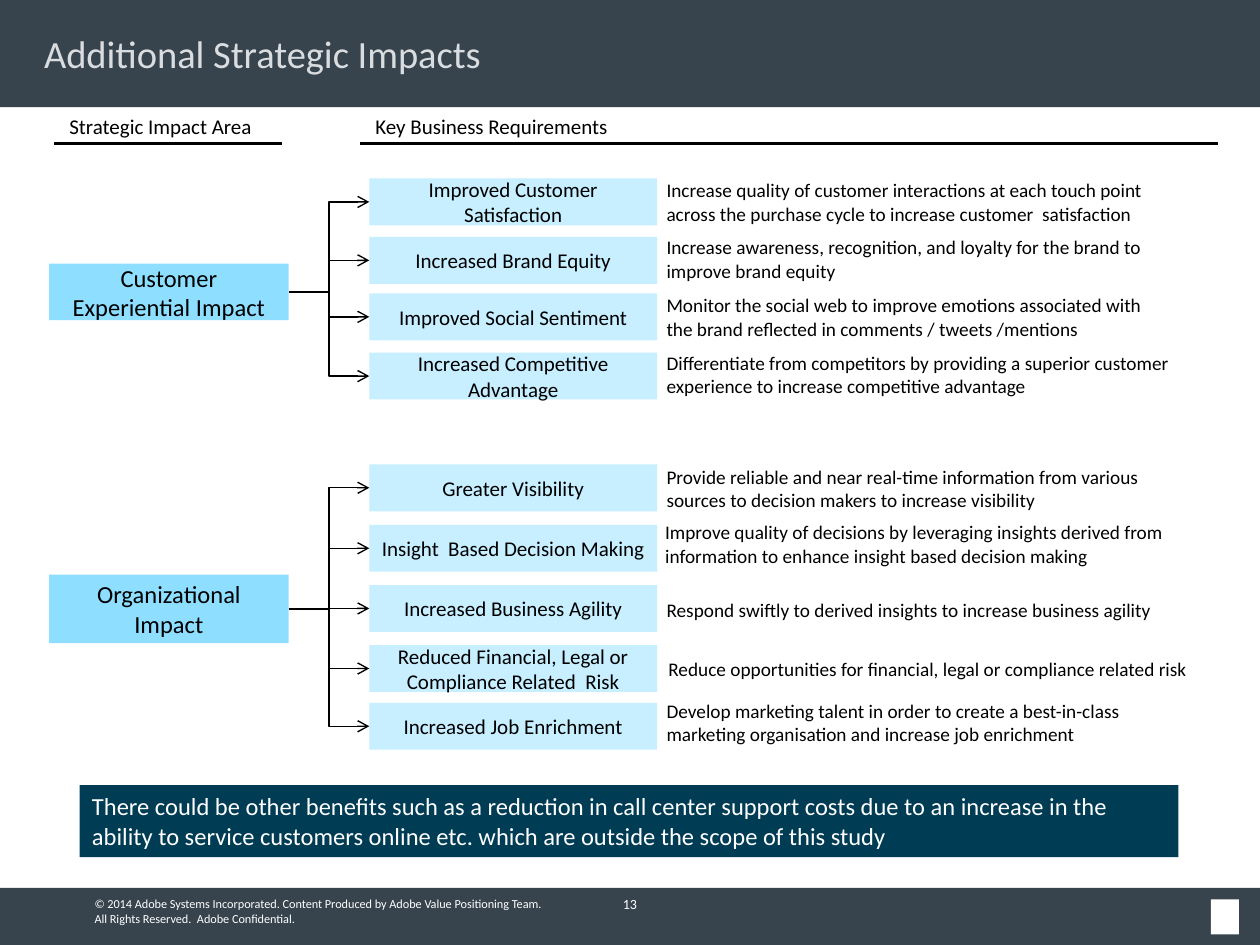
import pptx
import pptx.dml.color
import pptx.enum.shapes
import pptx.enum.text
import pptx.util
from dataclasses import dataclass

Pt = pptx.util.Pt
RGBColor = pptx.dml.color.RGBColor
Shape = pptx.enum.shapes.MSO_SHAPE
Connector = pptx.enum.shapes.MSO_CONNECTOR
Anchor = pptx.enum.text.MSO_ANCHOR
Align = pptx.enum.text.PP_ALIGN

FONT = "Calibri"
BLACK = RGBColor(0x00, 0x00, 0x00)
WHITE = RGBColor(0xFF, 0xFF, 0xFF)
SLATE = RGBColor(0x37, 0x43, 0x4D)
TITLE_GREY = RGBColor(0xDA, 0xDD, 0xE0)
AREA_BLUE = RGBColor(0x8E, 0xDF, 0xFF)
PALE_BLUE = RGBColor(0xC7, 0xEF, 0xFF)
NAVY = RGBColor(0x00, 0x3C, 0x54)

SLIDE_W, SLIDE_H = 720, 540
AREA_X, AREA_W = 28, 137
REQ_X, REQ_W, REQ_H = 211, 164.5, 26.8


@dataclass
class Requirement:
    name: str
    top: float
    detail: str
    detail_top: float
    detail_x: float = 373.8
    detail_w: float = 345.6
    detail_h: float = 33.8


@dataclass
class Area:
    name: str
    top: float
    height: float
    requirements: list[Requirement]


@dataclass
class Heading:
    text: str
    x: float
    width: float
    rule_start: float
    rule_end: float


AREAS = [
    Area("Customer Experiential Impact", 150.6, 32.4, [
        Requirement("Improved Customer Satisfaction", 102,
                    "Increase quality of customer interactions at each touch point across "
                    "the purchase cycle to increase customer  satisfaction",
                    98.6, detail_w=306.7),
        Requirement("Increased Brand Equity", 135.4,
                    "Increase awareness, recognition, and loyalty for the brand to\n"
                    "improve brand equity", 131.2),
        Requirement("Improved Social Sentiment", 167.7,
                    "Monitor the social web to improve emotions associated with\n"
                    "the brand reflected in comments / tweets /mentions", 164.3),
        Requirement("Increased Competitive Advantage", 201.5,
                    "Differentiate from competitors by providing a superior customer "
                    "experience to increase competitive advantage", 197.4),
    ]),
    Area("Organizational Impact", 328.3, 39.2, [
        Requirement("Greater Visibility", 265.4,
                    "Provide reliable and near real-time information from various\n"
                    "sources to decision makers to increase visibility", 262.1),
        Requirement("Insight  Based Decision Making", 299.9,
                    "Improve quality of decisions by leveraging insights derived from "
                    "information to enhance insight based decision making",
                    294, detail_x=373),
        Requirement("Increased Business Agility", 334.3,
                    "Respond swiftly to derived insights to increase business agility",
                    338.4, detail_h=20.6),
        Requirement("Reduced Financial, Legal or Compliance Related  Risk", 368.6,
                    "Reduce opportunities for financial, legal or compliance related risk",
                    371.8, detail_x=374.8, detail_w=344.5, detail_h=20.6),
        Requirement("Increased Job Enrichment", 401.6,
                    "Develop marketing talent in order to create a best-in-class "
                    "marketing organisation and increase job enrichment",
                    396.2, detail_w=316),
    ]),
]

HEADINGS = [
    Heading("Key Business Requirements", 214.5, 179, 206, 696),
    Heading("Strategic Impact Area", 39.6, 140, 31, 161),
]


def write(sp, text: str, *, size: float, color=BLACK, align=Align.LEFT,
          anchor=Anchor.TOP, inset: bool = True) -> None:
    tf = sp.text_frame
    tf.word_wrap = True
    tf.auto_size = pptx.enum.text.MSO_AUTO_SIZE.NONE
    tf.vertical_anchor = anchor
    if not inset:
        tf.margin_left = tf.margin_top = tf.margin_right = tf.margin_bottom = 0
    tf.text = text
    for p in tf.paragraphs:
        p.alignment = align
        p.font.name = FONT
        p.font.size = Pt(size)
        p.font.color.rgb = color


def add_block(s, x: float, y: float, w: float, h: float, fill: RGBColor):
    """Add a flat rectangle without outline."""
    sp = s.shapes.add_shape(Shape.RECTANGLE, Pt(x), Pt(y), Pt(w), Pt(h))
    sp.shadow.inherit = False
    sp.fill.solid()
    sp.fill.fore_color.rgb = fill
    sp.line.fill.background()
    return sp


def add_text(s, x: float, y: float, w: float, h: float, text: str, **style) -> None:
    write(s.shapes.add_textbox(Pt(x), Pt(y), Pt(w), Pt(h)), text, **style)


def add_line(s, kind, x1: float, y1: float, x2: float, y2: float, width: float):
    line = s.shapes.add_connector(kind, Pt(x1), Pt(y1), Pt(x2), Pt(y2))
    line.line.color.rgb = BLACK
    line.line.width = Pt(width)
    sp_pr = line._element.spPr
    sp_pr.append(pptx.oxml.parse_xml(
        '<a:effectLst xmlns:a="http://schemas.openxmlformats.org/drawingml/2006/main"/>'))
    return line


def add_arrow(s, source, target) -> None:
    """Join the right side of source to the left side of target."""
    line = add_line(s, Connector.ELBOW, 0, 0, 0, 0, 0.79)
    line.begin_connect(source, 3)
    line.end_connect(target, 1)
    ln = line.line._get_or_add_ln()
    ln.append(pptx.oxml.parse_xml(
        '<a:tailEnd xmlns:a="http://schemas.openxmlformats.org/drawingml/2006/main" type="arrow"/>'))


def add_area(s, area: Area) -> None:
    centred = dict(align=Align.CENTER, anchor=Anchor.MIDDLE)
    source = add_block(s, AREA_X, area.top, AREA_W, area.height, AREA_BLUE)
    write(source, area.name, size=14, **centred)
    for req in area.requirements:
        target = add_block(s, REQ_X, req.top, REQ_W, REQ_H, PALE_BLUE)
        write(target, req.name, size=12, **centred)
        add_text(s, req.detail_x, req.detail_top, req.detail_w, req.detail_h,
                 req.detail, size=11)
        add_arrow(s, source, target)


def add_heading(s, heading: Heading) -> None:
    add_text(s, heading.x, 65, heading.width, 14.4, heading.text, size=12, inset=False)
    add_line(s, Connector.STRAIGHT, heading.rule_start, 82.2, heading.rule_end, 82.2, 1.5)


def add_title(s, text: str) -> None:
    title = s.shapes.title
    title.left, title.top, title.width, title.height = Pt(18), Pt(14.4), Pt(684), Pt(32.4)
    write(title, text, size=22, color=TITLE_GREY, anchor=Anchor.MIDDLE)
    s.shapes._spTree.append(title._element)  # bring in front of the header band


def add_footer(s) -> None:
    add_block(s, 0, 507.4, SLIDE_W, SLIDE_H - 507.4, SLATE)
    add_block(s, 692, 514, 16, 20, WHITE)
    add_text(s, 54, 512, 306, 17.2,
             "© 2014 Adobe Systems Incorporated. Content Produced by Adobe Value Positioning Team.\n"
             "All Rights Reserved.  Adobe Confidential.",
             size=7, color=WHITE, anchor=Anchor.BOTTOM, inset=False)
    add_text(s, 330, 510, 60, 13, "13", size=8, color=WHITE,
             align=Align.CENTER, anchor=Anchor.MIDDLE)


def main() -> None:
    prs = pptx.Presentation()
    prs.slide_width, prs.slide_height = Pt(SLIDE_W), Pt(SLIDE_H)
    s = prs.slides.add_slide(prs.slide_layouts[5])
    add_block(s, 0, 0, SLIDE_W, 61.2, SLATE)
    add_title(s, "Additional Strategic Impacts")
    for heading in HEADINGS:
        add_heading(s, heading)
    for area in AREAS:
        add_area(s, area)
    note = add_block(s, 45.5, 448.6, 628, 41.2, NAVY)
    write(note, "There could be other benefits such as a reduction in call center support costs "
          "due to an increase in the ability to service customers online etc. which are outside "
          "the scope of this study", size=14, color=WHITE)
    add_footer(s)
    prs.save("out.pptx")


if __name__ == "__main__":
    main()
